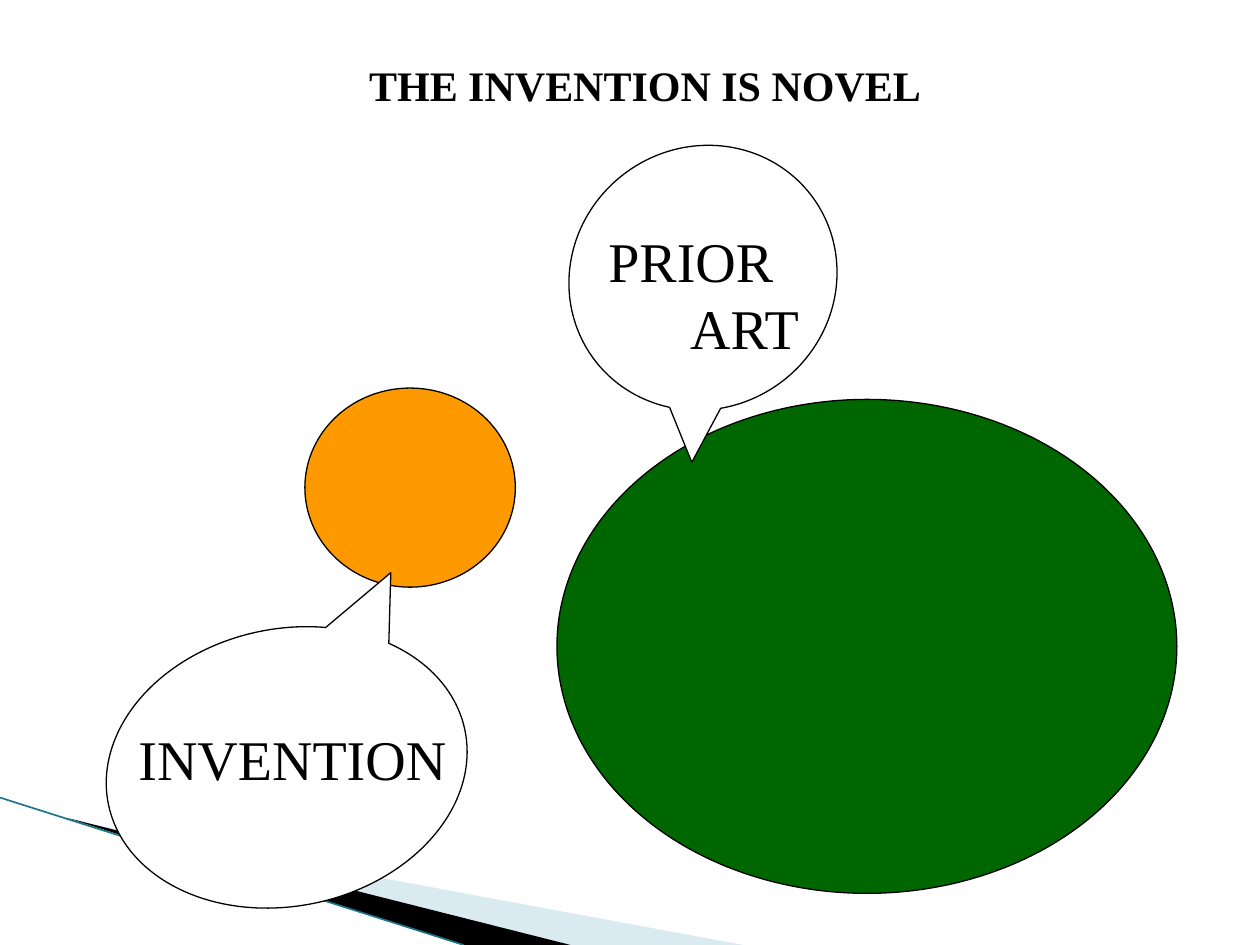
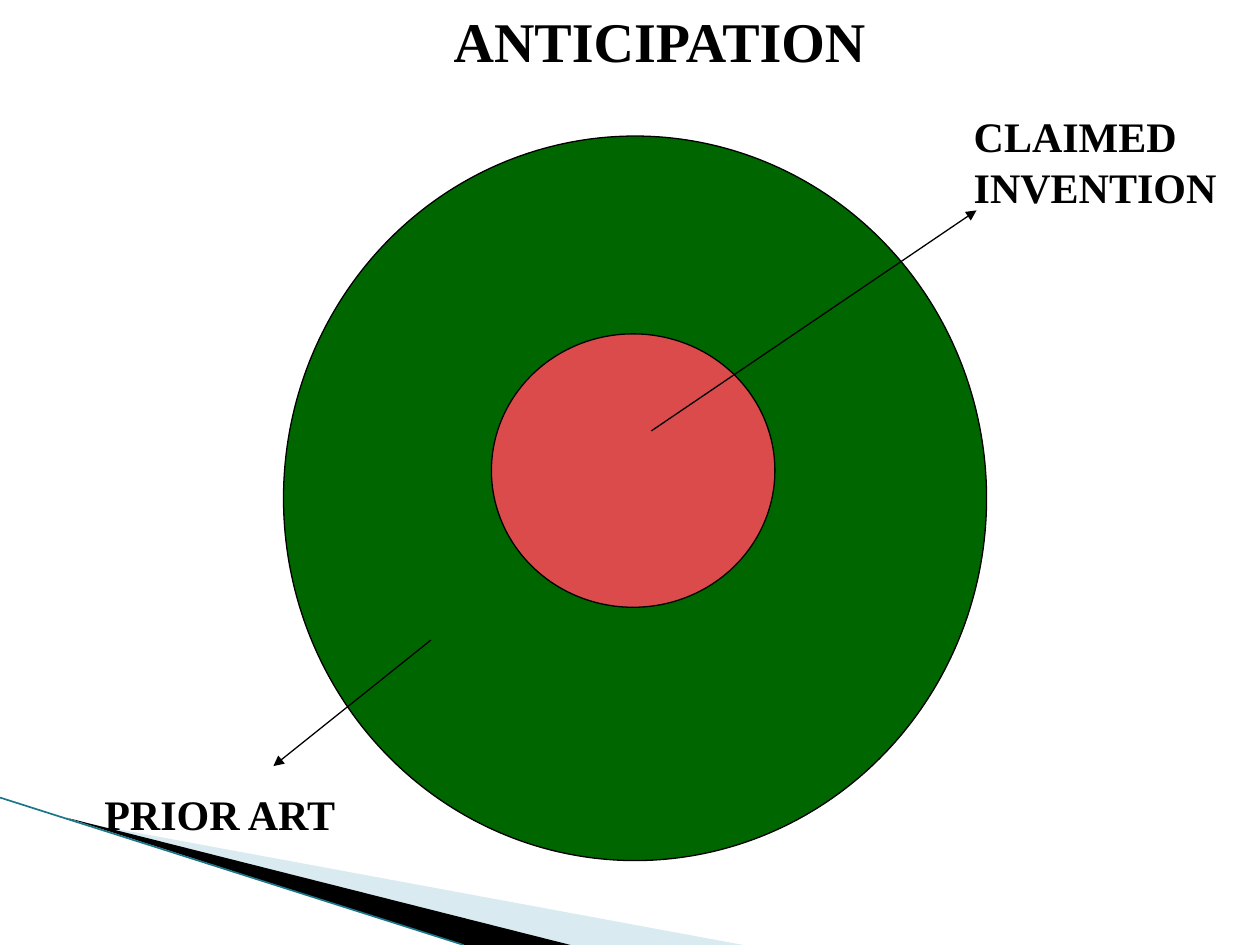
from lxml import etree
from pptx import Presentation
from pptx.dml.color import RGBColor
from pptx.enum import shapes, text
from pptx.oxml import ns
from pptx.util import Inches, Pt

BLACK = RGBColor(0x00, 0x00, 0x00)
WHITE = RGBColor(0xFF, 0xFF, 0xFF)
GREEN = RGBColor(0x00, 0x66, 0x00)
ORANGE = RGBColor(0xFF, 0x99, 0x00)
RED = RGBColor(0xDB, 0x4B, 0x4B)
PALE_BLUE = RGBColor(0xA0, 0xCB, 0xDC)
TEAL = RGBColor(0x1A, 0x76, 0x88)

FONT = "Times New Roman"
LARGE, SMALL = Pt(32), Pt(24)
THIN = Pt(0.75)
TITLE_ONLY = 5


def inches(values):
    return [Inches(value) for value in values]


class Deck:
    """Holds the shared style and the slide being drawn."""

    def __init__(self):
        self.presentation = Presentation()
        self.presentation.slide_width = Inches(10)
        self.presentation.slide_height = Inches(7.5)
        self.slide = None

    def new_slide(self, title, box, size):
        layout = self.presentation.slide_layouts[TITLE_ONLY]
        self.slide = self.presentation.slides.add_slide(layout)
        self.corner_bands()
        shape = self.slide.shapes.title
        shape.left, shape.top, shape.width, shape.height = inches(box)
        self.set_text(shape, [title], size, bold=True)

    def corner_bands(self):
        self.band([(0.55, 6.51), (5.9, 7.5), (4.53, 7.5)], PALE_BLUE, 40)
        self.band([(0.53, 6.49), (4.53, 7.5), (3.68, 7.5)], BLACK)
        self.line((0, 6.33), (3.68, 7.5), TEAL, Pt(0.95))

    def band(self, points, color, opacity=100):
        start, *rest = [inches(point) for point in points]
        builder = self.slide.shapes.build_freeform(*start)
        builder.add_line_segments(rest)
        shape = builder.convert_to_shape()
        shape.shadow.inherit = False
        shape.fill.solid()
        shape.fill.fore_color.rgb = color
        shape.line.fill.background()
        if opacity < 100:
            fill_color = shape._element.spPr.find(".//" + ns.qn("a:srgbClr"))
            alpha = etree.SubElement(fill_color, ns.qn("a:alpha"))
            alpha.set("val", str(opacity * 1000))

    def outlined(self, kind, box, color):
        shape = self.slide.shapes.add_shape(kind, *inches(box))
        shape.shadow.inherit = False
        shape.fill.solid()
        shape.fill.fore_color.rgb = color
        shape.line.color.rgb = BLACK
        shape.line.width = THIN
        return shape

    def ellipse(self, box, color):
        self.outlined(shapes.MSO_SHAPE.OVAL, box, color)

    def callout(self, box, rotation, tip):
        shape = self.outlined(shapes.MSO_SHAPE.OVAL_CALLOUT, box, WHITE)
        shape.rotation = rotation
        shape.adjustments[0], shape.adjustments[1] = tip

    def label(self, lines, box, size, bold=False):
        shape = self.slide.shapes.add_textbox(*inches(box))
        return self.set_text(shape, lines, size, bold)

    def set_text(self, shape, lines, size, bold):
        frame = shape.text_frame
        frame.text = "\n".join(lines)
        frame.word_wrap = False
        frame.auto_size = text.MSO_AUTO_SIZE.NONE
        frame.vertical_anchor = text.MSO_ANCHOR.TOP
        for paragraph in frame.paragraphs:
            paragraph.alignment = text.PP_ALIGN.LEFT
            paragraph.font.name = FONT
            paragraph.font.size = size
            paragraph.font.bold = bold
            paragraph.font.color.rgb = BLACK
        return frame

    def line(self, start, end, color=BLACK, width=THIN):
        connector = self.slide.shapes.add_connector(
            shapes.MSO_CONNECTOR.STRAIGHT, *inches(start + end))
        connector.line.color.rgb = color
        connector.line.width = width
        etree.SubElement(connector._element.spPr, ns.qn("a:effectLst"))
        return connector

    def arrow(self, start, end):
        outline = self.line(start, end).line._get_or_add_ln()
        etree.SubElement(outline, ns.qn("a:tailEnd")).set("type", "triangle")


def novelty_slide(deck):
    deck.new_slide("THE INVENTION IS NOVEL", (2.83, 0.42, 4.59, 0.5), SMALL)

    # Prior art and the separate invention
    deck.ellipse((4.42, 3.17, 4.92, 3.92), GREEN)
    deck.ellipse((2.42, 3.08, 1.67, 1.58), ORANGE)

    # Callouts with their labels
    deck.callout((4.5, 1.17, 2.16, 2.07), 323.1, (-0.44, 0.54))
    prior_art = deck.label(["PRIOR", "ART"], (4.73, 1.75, 1.76, 1.17), LARGE)
    second_line = prior_art.paragraphs[1]._p.get_or_add_pPr()
    second_line.set("marL", str(Inches(0.65)))
    deck.callout((0.83, 4.99, 2.89, 2.2), 168.1, (-0.39, 0.61))
    deck.label(["INVENTION"], (1, 5.7, 2.64, 0.63), LARGE)


def anticipation_slide(deck):
    deck.new_slide("ANTICIPATION", (3.5, 0, 4.04, 0.63), LARGE)

    # Claimed invention inside the prior art
    deck.ellipse((2.25, 1.08, 5.58, 5.75), GREEN)
    deck.ellipse((3.9, 2.65, 2.25, 2.17), RED)

    # Labels and arrows
    deck.label(["PRIOR ART"], (0.73, 6.21, 2.06, 0.5), SMALL, bold=True)
    deck.label(["CLAIMED", "INVENTION"], (7.63, 0.83, 2.13, 0.9), SMALL,
               bold=True)
    deck.arrow((5.17, 3.42), (7.75, 1.67))
    deck.arrow((3.42, 5.08), (2.17, 6.08))


def main():
    deck = Deck()
    novelty_slide(deck)
    anticipation_slide(deck)
    deck.presentation.save("out.pptx")


if __name__ == "__main__":
    main()
